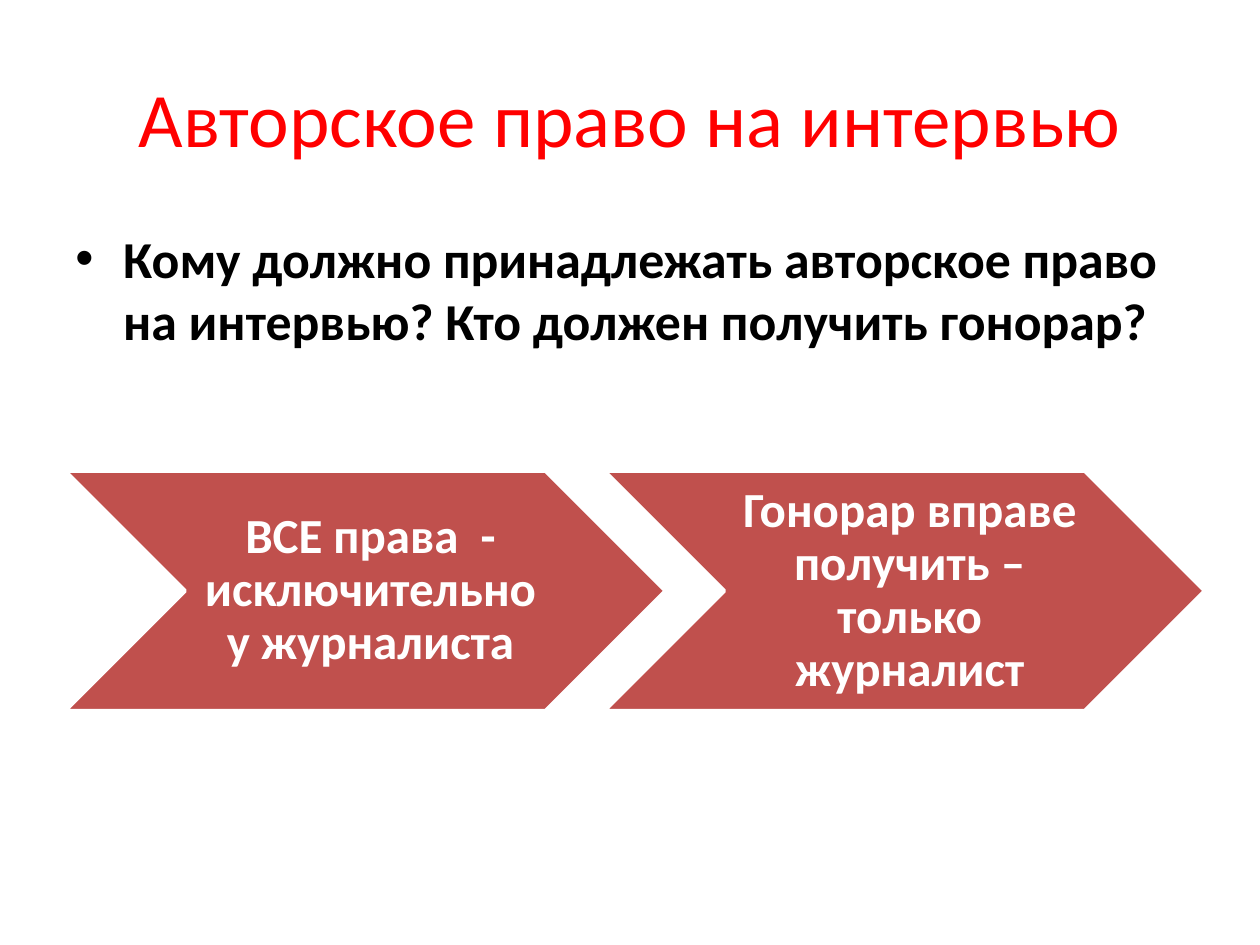
from lxml import etree
from pptx import Presentation
from pptx.dml.color import RGBColor
from pptx.enum.shapes import MSO_SHAPE as Shape
from pptx.enum.text import MSO_ANCHOR as Anchor, PP_ALIGN as Align
from pptx.oxml.ns import qn
from pptx.util import Inches, Pt

COLORS = {"title": "FF0000", "body": "000000", "chevron": "C0504D", "white": "FFFFFF"}
FONT = "Calibri"
STATEMENTS = [
    "ВСЕ права  - исключительно у журналиста",
    "Гонорар вправе получить – только журналист",
]
CHEVRON_LEFT, CHEVRON_TOP = 0.52, 3.74
CHEVRON_WIDTH, CHEVRON_HEIGHT = 4.76, 1.9
CHEVRON_STEP = 4.28


def color(name):
    return RGBColor.from_string(COLORS[name])


def write_text(shape, text, size, color_name, bold=False, align=Align.LEFT, anchor=Anchor.TOP):
    frame = shape.text_frame
    frame.text = text
    frame.word_wrap = True
    frame.vertical_anchor = anchor
    para = frame.paragraphs[0]
    para.alignment = align
    font = para.runs[0].font
    font.name = FONT
    font.size = Pt(size)
    font.bold = bold
    font.color.rgb = color(color_name)
    return para


def add_title(page, text):
    box = page.shapes.add_textbox(Inches(0.5), Inches(0.3), Inches(9), Inches(1.25))
    write_text(box, text, 44, "title", align=Align.CENTER, anchor=Anchor.MIDDLE)


def add_bullet(page, text):
    box = page.shapes.add_textbox(Inches(0.5), Inches(1.75), Inches(9), Inches(1.21))
    para = write_text(box, text, 29.6, "body", bold=True)
    para.space_before = Pt(6)
    properties = para._p.get_or_add_pPr()
    properties.set("marL", str(Inches(0.38)))
    properties.set("indent", str(Inches(-0.38)))
    etree.SubElement(properties, qn("a:buFont")).set("typeface", "Arial")
    etree.SubElement(properties, qn("a:buChar")).set("char", "•")


def add_chevron(page, left, text):
    chevron = page.shapes.add_shape(
        Shape.CHEVRON, Inches(left), Inches(CHEVRON_TOP),
        Inches(CHEVRON_WIDTH), Inches(CHEVRON_HEIGHT),
    )
    chevron.shadow.inherit = False
    chevron.fill.solid()
    chevron.fill.fore_color.rgb = color("chevron")
    chevron.line.color.rgb = color("white")
    chevron.line.width = Pt(2)
    para = write_text(chevron, text, 28, "white", True, Align.CENTER, Anchor.MIDDLE)
    para.line_spacing = 0.9
    frame = chevron.text_frame
    frame.margin_left = Inches(0.12)
    frame.margin_right = frame.margin_top = frame.margin_bottom = Inches(0.04)


def main():
    deck = Presentation()
    deck.slide_width, deck.slide_height = Inches(10), Inches(7.5)
    page = deck.slides.add_slide(deck.slide_layouts[6])
    add_title(page, "Авторское право на интервью")
    add_bullet(page, "Кому должно принадлежать авторское право на интервью? Кто должен получить гонорар?")
    for index, statement in enumerate(STATEMENTS):
        add_chevron(page, CHEVRON_LEFT + index * CHEVRON_STEP, statement)
    deck.save("out.pptx")


if __name__ == "__main__":
    main()
